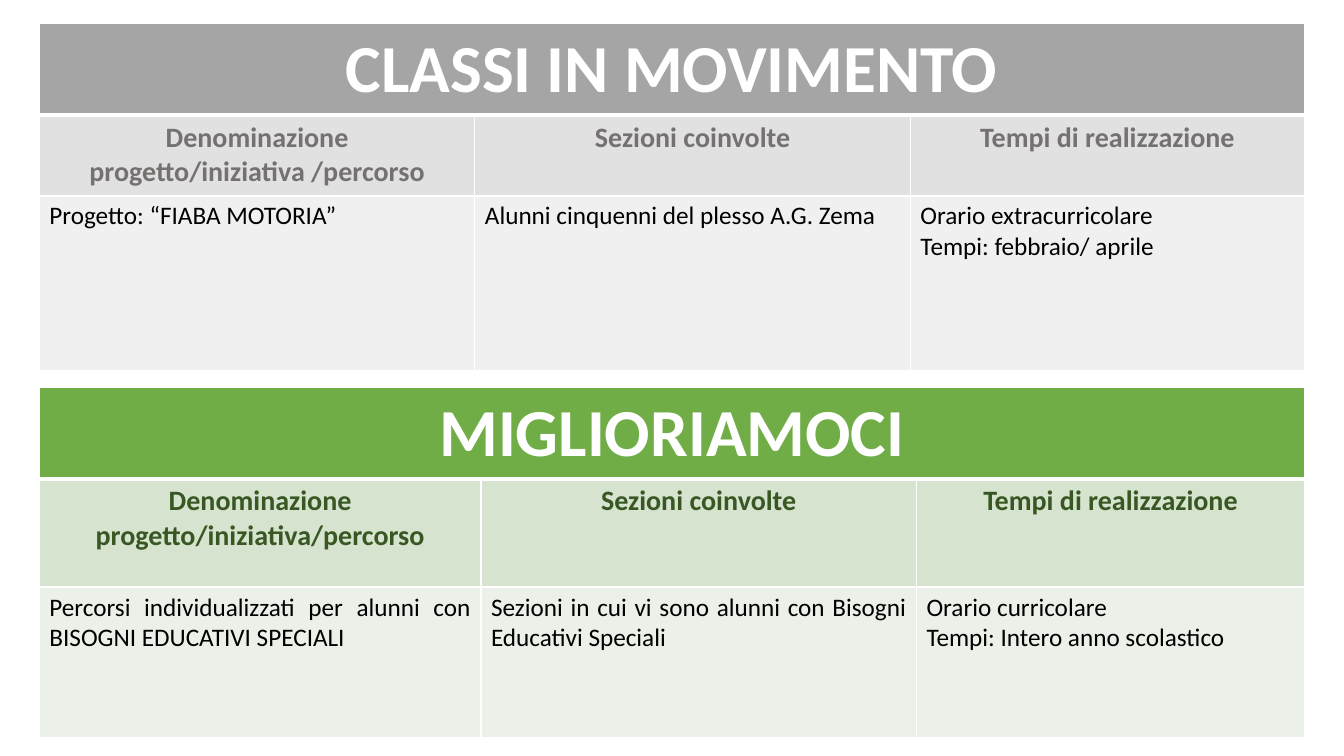
"""Build a slide with two school project tables."""
from lxml.etree import SubElement
from pptx import Presentation
from pptx.dml.color import RGBColor
from pptx.enum.text import PP_ALIGN
from pptx.oxml.ns import qn
from pptx.util import Inches, Pt

WHITE = RGBColor(0xFF, 0xFF, 0xFF)
BLACK = RGBColor(0x00, 0x00, 0x00)
GREY = RGBColor(0xA5, 0xA5, 0xA5)
GREY_MID = RGBColor(0xE1, 0xE1, 0xE1)
GREY_PALE = RGBColor(0xF0, 0xF0, 0xF0)
GREY_DARK = RGBColor(0x76, 0x71, 0x71)
GREEN = RGBColor(0x70, 0xAD, 0x47)
GREEN_MID = RGBColor(0xD5, 0xE3, 0xCF)
GREEN_PALE = RGBColor(0xEB, 0xF1, 0xE9)
GREEN_DARK = RGBColor(0x38, 0x57, 0x23)

LEFT, WIDTH = 0.39, 12.55
SIZES = [48, 20, 18]
ALIGNS = [PP_ALIGN.CENTER, PP_ALIGN.CENTER, PP_ALIGN.JUSTIFY]

TABLES = [
    (0.23, [4.32, 4.32, 3.91], [0.91, 0.8, 1.73],
     [GREY, GREY_MID, GREY_PALE], [WHITE, GREY_DARK, BLACK],
     [["CLASSI IN MOVIMENTO", "", ""],
      ["Denominazione progetto/iniziativa /percorso",
       "Sezioni coinvolte", "Tempi di realizzazione"],
      ["Progetto: “FIABA MOTORIA”",
       "Alunni cinquenni del plesso A.G. Zema",
       "Orario extracurricolare\nTempi: febbraio/ aprile"]]),
    (3.84, [4.38, 4.32, 3.85], [0.91, 1.07, 1.49],
     [GREEN, GREEN_MID, GREEN_PALE], [WHITE, GREEN_DARK, BLACK],
     [["MIGLIORIAMOCI", "", ""],
      ["Denominazione progetto/iniziativa/percorso",
       "Sezioni coinvolte", "Tempi di realizzazione"],
      ["Percorsi individualizzati per alunni con BISOGNI EDUCATIVI SPECIALI",
       "Sezioni in cui vi sono alunni con Bisogni Educativi Speciali",
       "Orario curricolare\nTempi: Intero anno scolastico"]]),
]


def add_edge(cell, side, width):
    """Draw one white cell border."""
    line = SubElement(cell._tc.get_or_add_tcPr(), qn(f"a:ln{side}"), w=str(Pt(width)))
    fill = SubElement(line, qn("a:solidFill"))
    SubElement(fill, qn("a:srgbClr"), val=str(WHITE))


deck = Presentation()
deck.slide_width, deck.slide_height = Inches(13.33), Inches(7.5)
slide = deck.slides.add_slide(deck.slide_layouts[6])

for top, widths, heights, fills, inks, texts in TABLES:
    frame = slide.shapes.add_table(
        3, 3, Inches(LEFT), Inches(top), Inches(WIDTH), Inches(sum(heights)))
    table = frame.table
    for col, width in zip(table.columns, widths):
        col.width = Inches(width)
    table.cell(0, 0).merge(table.cell(0, 2))

    for r, row in enumerate(table.rows):
        row.height = Inches(heights[r])
        for c, cell in enumerate(row.cells):
            for side in "LRTB":
                thick = (r, side) in [(0, "B"), (1, "T")]
                add_edge(cell, side, 3 if thick else 1)
            cell.fill.solid()
            cell.fill.fore_color.rgb = fills[r]
            if cell.is_spanned:
                continue
            cell.text_frame.text = texts[r][c]
            for para in cell.text_frame.paragraphs:
                para.alignment = ALIGNS[r]
                for run in para.runs:
                    run.font.name = "Calibri"
                    run.font.size = Pt(SIZES[r])
                    run.font.bold = r < 2
                    run.font.color.rgb = inks[r]

deck.save("out.pptx")
